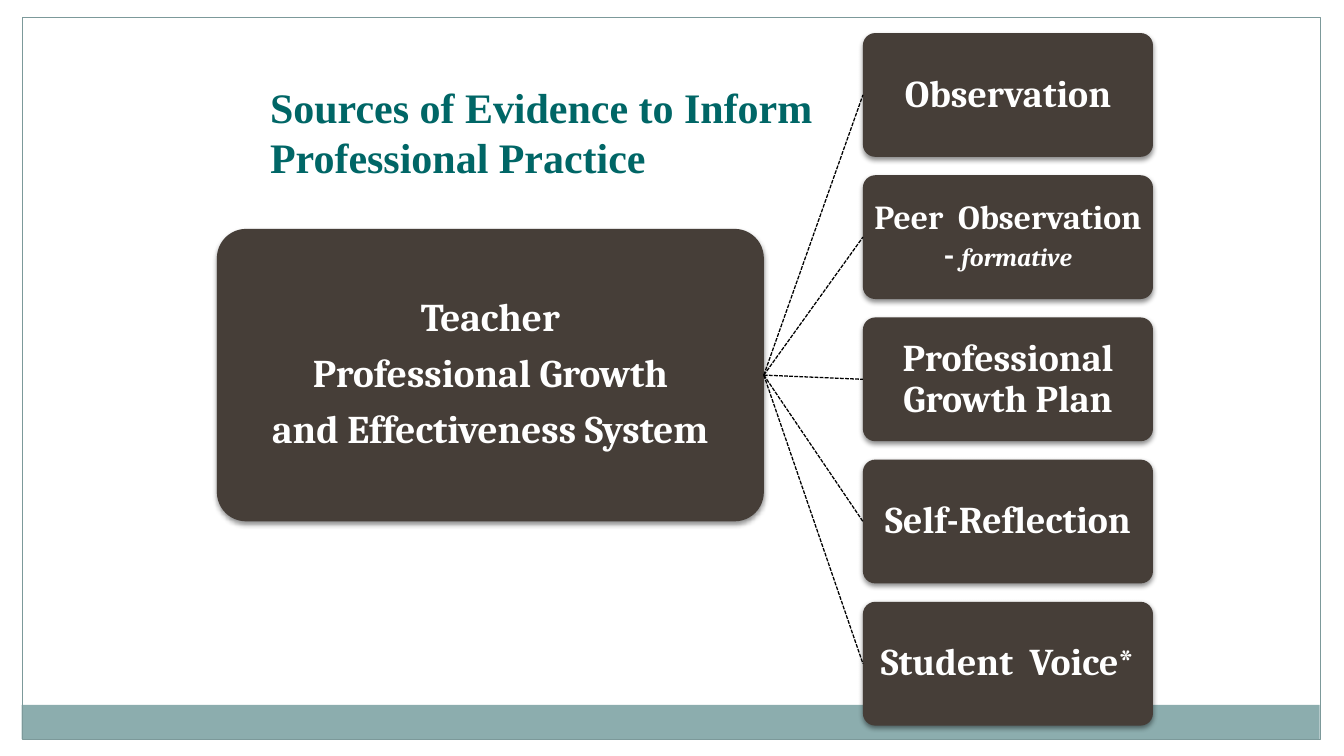
from lxml import etree
from pptx import Presentation
from pptx.dml.color import RGBColor
from pptx.enum.dml import MSO_LINE
from pptx.enum.shapes import MSO_CONNECTOR, MSO_SHAPE
from pptx.enum.text import MSO_ANCHOR, PP_ALIGN
from pptx.oxml.ns import qn
from pptx.util import Pt

RECTANGLE, ROUNDED = MSO_SHAPE.RECTANGLE, MSO_SHAPE.ROUNDED_RECTANGLE
STRAIGHT, DASH = MSO_CONNECTOR.STRAIGHT, MSO_LINE.SQUARE_DOT
MIDDLE, CENTER = MSO_ANCHOR.MIDDLE, PP_ALIGN.CENTER
LEFT_SIDE, RIGHT_SIDE = 1, 3

# Content: a box is a list of paragraphs, a paragraph a list of (text, size, italic)
TITLE = "Sources of Evidence to Inform Professional Practice"
SYSTEM = [[("Teacher", 28, False)],
          [("Professional Growth", 28, False)],
          [("and Effectiveness System", 28, False)]]
SOURCES = [
    [[("Observation", 27, False)]],
    [[("Peer  Observation - ", 24, False), ("formative", 18, True)]],
    [[("Professional Growth Plan", 27, False)]],
    [[("Self-Reflection", 27, False)]],
    [[("Student  Voice*", 27, False)]],
]
COLOURS = {"box": "463E38", "text": "FFFFFF", "title": "006666",
           "band": "8CADAE", "frame": "7C999A", "line": "000000"}

# Layout in points
SLIDE_SIZE = (960, 540)
BAND = (15.4, 503.5, 927.2, 24.5)
FRAME = (15.9, 12.3, 927.2, 515.7)
TITLE_BOX = (185.8, 54.7, 404.6, 90)
SYSTEM_BOX = (154.9, 163.5, 390.7, 208.9)
SOURCE_LEFT, SOURCE_TOP, SOURCE_PITCH = 616.4, 23.6, 101.57
SOURCE_WIDTH, SOURCE_HEIGHT = 207.2, 88.4
INSET, SPACE_AFTER = 1.4, 0.35


def colour(name):
    return RGBColor.from_string(COLOURS[name])


def points(values):
    return [Pt(value) for value in values]


def add_panel(kind, box):
    shape = slide.shapes.add_shape(kind, *points(box))
    shape.shadow.inherit = False
    return shape


def add_shadow(shape):
    effects = shape._element.spPr.find(qn("a:effectLst"))
    shadow = etree.SubElement(effects, qn("a:outerShdw"), blurRad=str(Pt(4)),
                              dist=str(Pt(2)), dir="5400000", rotWithShape="0")
    black = etree.SubElement(shadow, qn("a:srgbClr"), val=COLOURS["line"])
    etree.SubElement(black, qn("a:alpha"), val="45000")


def style_run(run, font_name, size, colour_name, italic=False):
    run.font.name, run.font.size = font_name, Pt(size)
    run.font.bold, run.font.italic = True, italic
    run.font.color.rgb = colour(colour_name)


def add_box(box, paragraphs):
    shape = add_panel(ROUNDED, box)
    shape.adjustments[0] = 0.1
    shape.fill.solid()
    shape.fill.fore_color.rgb = colour("box")
    shape.line.fill.background()
    add_shadow(shape)
    frame = shape.text_frame
    frame.word_wrap, frame.vertical_anchor = True, MIDDLE
    frame.margin_left = frame.margin_right = Pt(INSET)
    frame.margin_top = frame.margin_bottom = Pt(INSET)
    frame.text = "\n".join("" for _ in paragraphs)
    for paragraph, runs in zip(frame.paragraphs, paragraphs):
        paragraph.alignment, paragraph.line_spacing = CENTER, 0.9
        paragraph.space_after = Pt(runs[0][1] * SPACE_AFTER)
        for text, size, italic in runs:
            run = paragraph.add_run()
            run.text = text
            style_run(run, "Cambria", size, "text", italic)
    return shape


def add_link(start, end):
    connector = slide.shapes.add_connector(STRAIGHT, 0, 0, 0, 0)
    connector.begin_connect(start, RIGHT_SIDE)
    connector.end_connect(end, LEFT_SIDE)
    connector.line.color.rgb = colour("line")
    connector.line.width, connector.line.dash_style = Pt(0.9), DASH
    etree.SubElement(connector._element.spPr, qn("a:effectLst"))


presentation = Presentation()
presentation.slide_width, presentation.slide_height = points(SLIDE_SIZE)
slide = presentation.slides.add_slide(presentation.slide_layouts[6])

# Bottom band and page frame
band = add_panel(RECTANGLE, BAND)
band.fill.solid()
band.fill.fore_color.rgb = colour("band")
band.line.fill.background()
page_frame = add_panel(RECTANGLE, FRAME)
page_frame.fill.background()
page_frame.line.color.rgb = colour("frame")
page_frame.line.width = Pt(0.75)

# System box linked to each source of evidence
system = add_box(SYSTEM_BOX, SYSTEM)
for index, source in enumerate(SOURCES):
    top = SOURCE_TOP + index * SOURCE_PITCH
    source_box = add_box((SOURCE_LEFT, top, SOURCE_WIDTH, SOURCE_HEIGHT), source)
    add_link(system, source_box)

# Title
title = slide.shapes.add_textbox(*points(TITLE_BOX))
title.text_frame.word_wrap = True
title.text_frame.text = TITLE
style_run(title.text_frame.paragraphs[0].runs[0], "Times New Roman", 30, "title")

presentation.save("out.pptx")
